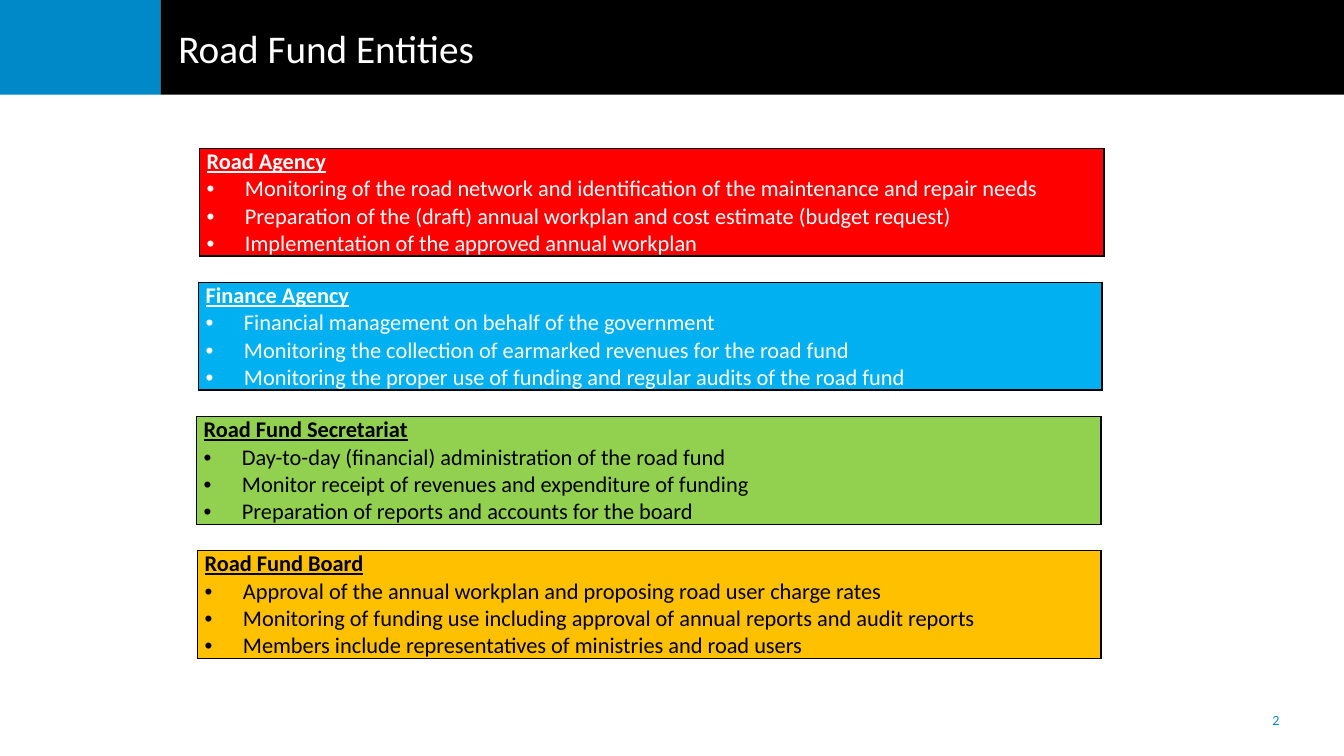
"""Build the Road Fund Entities slide with four bordered responsibility tables."""
from lxml.etree import SubElement
from pptx import Presentation
from pptx.dml.color import RGBColor
from pptx.enum.shapes import MSO_SHAPE
from pptx.enum.text import MSO_ANCHOR, PP_ALIGN
from pptx.oxml import parse_xml
from pptx.oxml.ns import qn
from pptx.util import Inches, Pt

COLORS = {
    "black": "000000", "white": "FFFFFF", "blue": "0089C9", "red": "FF0000",
    "sky": "00B0F0", "green": "92D050", "amber": "FFC000",
}
DRAWING = "http://schemas.openxmlformats.org/drawingml/2006/main"
ENTITIES = [
    ("Road Agency", "red", "white", 1.98, 8.97, [
        "Monitoring of the road network and identification of the maintenance and repair needs",
        "Preparation of the (draft) annual workplan and cost estimate (budget request)",
        "Implementation of the approved annual workplan"]),
    ("Finance Agency", "sky", "white", 1.97, 8.96, [
        "Financial management on behalf of the government",
        "Monitoring the collection of earmarked revenues for the road fund",
        "Monitoring the proper use of funding and regular audits of the road fund"]),
    ("Road Fund Secretariat", "green", "black", 1.95, 8.97, [
        "Day-to-day (financial) administration of the road fund",
        "Monitor receipt of revenues and expenditure of funding",
        "Preparation of reports and accounts for the board"]),
    ("Road Fund Board", "amber", "black", 1.96, 8.96, [
        "Approval of the annual workplan and proposing road user charge rates",
        "Monitoring of funding use including approval of annual reports and audit reports",
        "Members include representatives of ministries and road users"]),
]
FIRST_TOP, PITCH, TABLE_HEIGHT = 1.47, 1.33, 1.07


def add_span(para, text, size, color):
    span = para.add_run()
    span.text = text
    span.font.name = "Calibri"
    span.font.size = Pt(size)
    span.font.color.rgb = RGBColor.from_string(COLORS[color])
    return span


deck = Presentation()
deck.slide_width, deck.slide_height = Inches(13.33), Inches(7.5)
page = deck.slides.add_slide(deck.slide_layouts[6])

for left, width, color in [(1.59, 11.75, "black"), (-0.02, 1.61, "blue")]:
    band = page.shapes.add_shape(
        MSO_SHAPE.RECTANGLE, Inches(left), Inches(0), Inches(width), Inches(0.94))
    band.shadow.inherit = False
    band.fill.solid()
    band.fill.fore_color.rgb = RGBColor.from_string(COLORS[color])
    band.line.fill.background()

for text, place, size, color, align in [
    ("Road Fund Entities", (1.67, 0.08, 11.67, 0.79), 28, "white", PP_ALIGN.LEFT),
    ("2", (12.29, 6.95, 0.73, 0.39), 10, "blue", PP_ALIGN.CENTER),
]:
    box = page.shapes.add_textbox(*map(Inches, place))
    box.text_frame.word_wrap = True
    box.text_frame.vertical_anchor = MSO_ANCHOR.MIDDLE
    para = box.text_frame.paragraphs[0]
    para.alignment = align
    add_span(para, text, size, color)

for index, (heading, fill, ink, left, width, duties) in enumerate(ENTITIES):
    table = page.shapes.add_table(
        1, 1, Inches(left), Inches(FIRST_TOP + index * PITCH),
        Inches(width), Inches(TABLE_HEIGHT)).table
    table.first_row = table.horz_banding = False
    cell = table.cell(0, 0)
    cell.margin_left = cell.margin_right = Inches(0.07)
    cell.margin_top = cell.margin_bottom = Inches(0)
    cell.fill.solid()
    cell.fill.fore_color.rgb = RGBColor.from_string(COLORS[fill])
    for order, side in enumerate(["lnL", "lnR", "lnT", "lnB"]):
        border = parse_xml(
            f'<a:{side} xmlns:a="{DRAWING}" w="{Pt(1)}"><a:solidFill>'
            f'<a:srgbClr val="{COLORS["black"]}"/></a:solidFill></a:{side}>')
        cell.fill._xPr.insert(order, border)

    para = cell.text_frame.paragraphs[0]
    para.alignment = PP_ALIGN.JUSTIFY
    span = add_span(para, heading, 16, ink)
    span.font.bold = span.font.underline = True
    for duty in duties:
        para = cell.text_frame.add_paragraph()
        para.alignment = PP_ALIGN.JUSTIFY
        settings = para._p.get_or_add_pPr()
        settings.set("marL", str(Inches(0.38)))
        settings.set("indent", str(Inches(-0.38)))
        SubElement(settings, qn("a:buFont"), typeface="Arial")
        SubElement(settings, qn("a:buChar"), char="•")
        add_span(para, duty, 16, ink)

deck.save("out.pptx")
